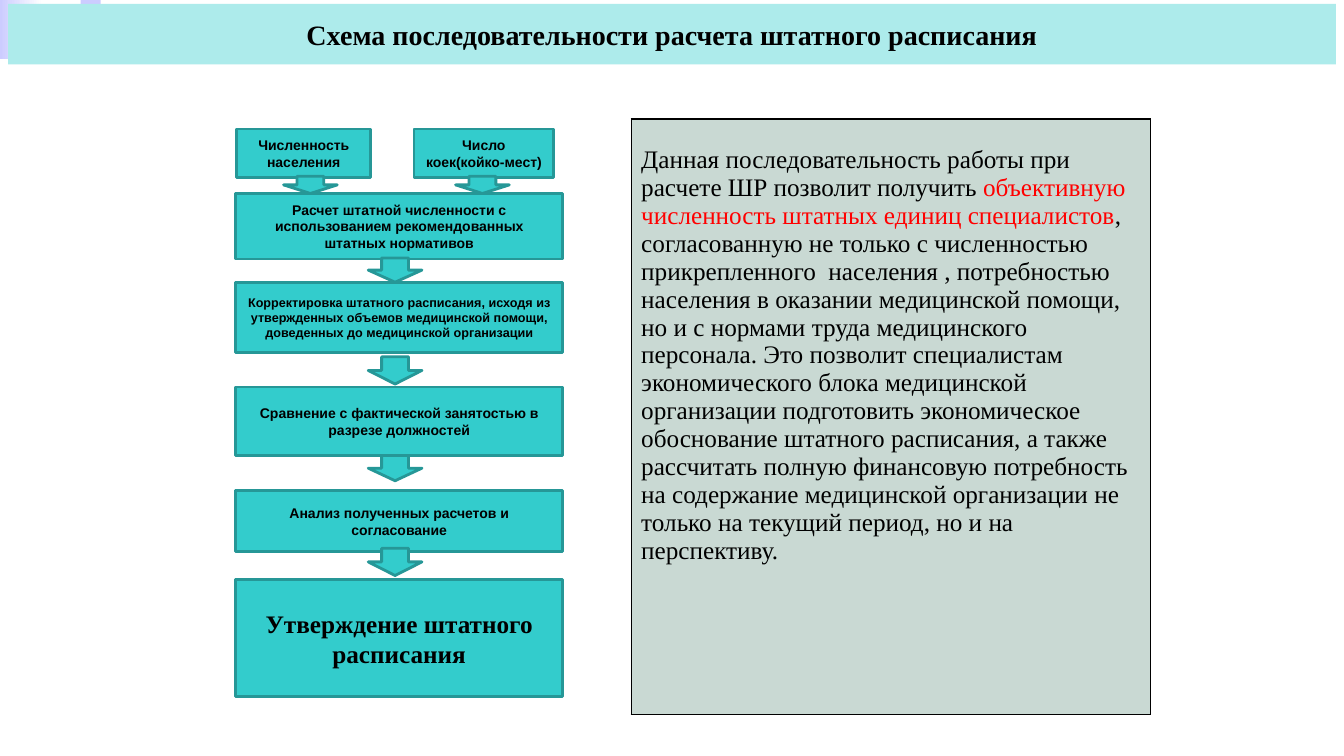
from lxml.etree import SubElement
from pptx import Presentation
from pptx.dml.color import RGBColor
from pptx.enum.shapes import MSO_SHAPE
from pptx.enum.text import MSO_ANCHOR, PP_ALIGN
from pptx.oxml.ns import qn
from pptx.util import Inches, Pt

WIDTH, HEIGHT = Inches(13.33), Inches(7.5)
BLACK = RGBColor(0, 0, 0)
WHITE = RGBColor(255, 255, 255)
RED = RGBColor(255, 0, 0)
LILAC = RGBColor(0xCC, 0xCC, 0xFF)
PALE_TEAL = RGBColor(0xAD, 0xEB, 0xEB)
TEAL = RGBColor(0x33, 0xCC, 0xCC)
DARK_TEAL = RGBColor(0x26, 0x97, 0x97)
GREY_GREEN = RGBColor(0xC9, 0xD9, 0xD3)
SERIF, SANS = "Times New Roman", "Arial"

# Places are left, top, width, height in percent of the slide's size.
FLOW_LEFT, FLOW_WIDTH = 17.55, 24.3
ARROW_WIDTH = 4
INPUT_TOP, INPUT_HEIGHT = 17.07, 6.4
INPUTS = [
    ("Численность населения", 17.6, 10, 21.1),
    ("Число коек(койко-мест)", 30.8, 10.4, 33.9),
]
STEPS = [
    ("Расчет штатной численности с использованием рекомендованных "
     "штатных нормативов", 25.6, 8.67, {}),
    ("Корректировка штатного расписания, исходя из утвержденных объемов "
     "медицинской помощи, доведенных до медицинской организации",
     37.33, 9.33, {"size": 9}),
    ("Сравнение с фактической занятостью в разрезе должностей",
     51.2, 9.07, {}),
    ("Анализ полученных расчетов и согласование", 64.93, 8, {}),
    ("Утверждение штатного расписания", 76.67, 15.47,
     {"size": 18, "font": SERIF}),
]
INPUT_ARROW = (23.33, 2.27)
STEP_ARROWS = [(34.13, 3.2), (47.2, 3.6), (60.27, 3.33), (72.53, 3.6)]
STEP_ARROW_LEFT = 27.4

EXPLANATION = [
    ("Данная последовательность работы при расчете ШР позволит получить ",
     BLACK),
    ("объективную численность штатных единиц специалистов", RED),
    (", согласованную не только с численностью прикрепленного  населения , "
     "потребностью населения в оказании медицинской помощи, но и с нормами "
     "труда медицинского персонала. Это позволит специалистам экономического "
     "блока медицинской организации подготовить экономическое обоснование "
     "штатного расписания, а также рассчитать полную финансовую потребность "
     "на содержание медицинской организации не только на текущий период, "
     "но и на перспективу.", BLACK),
]


def to_lengths(place):
    left, top, width, height = place
    return (int(WIDTH * left / 100), int(HEIGHT * top / 100),
            int(WIDTH * width / 100), int(HEIGHT * height / 100))


def add_text(para, text, size=10, font=SANS, color=BLACK, bold=True):
    span = para.add_run()
    span.text = text
    span.font.size = Pt(size)
    span.font.name = font
    span.font.bold = bold
    span.font.color.rgb = color


def add_block(page, place, fill, line=None, kind=MSO_SHAPE.RECTANGLE):
    block = page.shapes.add_shape(kind, *to_lengths(place))
    block.shadow.inherit = False
    block.fill.solid()
    block.fill.fore_color.rgb = fill
    if line is None:
        block.line.fill.background()
    else:
        block.line.color.rgb = line
        block.line.width = Pt(2)
    return block


def add_label(block, text, **text_format):
    """Centre a text in a block."""
    frame = block.text_frame
    frame.word_wrap = True
    frame.vertical_anchor = MSO_ANCHOR.MIDDLE
    para = frame.paragraphs[0]
    para.alignment = PP_ALIGN.CENTER
    add_text(para, text, **text_format)


def add_step(page, place, text, **text_format):
    add_label(add_block(page, place, TEAL, DARK_TEAL), text, **text_format)


def add_arrow(page, left, top, height):
    add_block(page, (left, top, ARROW_WIDTH, height), TEAL, DARK_TEAL,
              MSO_SHAPE.DOWN_ARROW)


def add_header(page):
    corner = add_block(page, (0, 0, 3.15, 7.8), LILAC)
    corner.fill.gradient()
    corner.fill.gradient_angle = 0
    for stop, color in zip(corner.fill.gradient_stops, (LILAC, WHITE)):
        stop.color.rgb = color
    add_block(page, (6, 0, 1.5, 2), LILAC)
    title = add_block(page, (0.6, 0.53, 98.8, 8), PALE_TEAL)
    add_label(title, "Схема последовательности расчета штатного расписания",
              size=20, font=SERIF)


def add_flow(page):
    for text, left, width, _ in INPUTS:
        add_step(page, (left, INPUT_TOP, width, INPUT_HEIGHT), text)
    for text, top, height, text_format in STEPS:
        add_step(page, (FLOW_LEFT, top, FLOW_WIDTH, height), text,
                 **text_format)
    for *_, arrow_left in INPUTS:
        add_arrow(page, arrow_left, *INPUT_ARROW)
    for top, height in STEP_ARROWS:
        add_arrow(page, STEP_ARROW_LEFT, top, height)


def set_borders(cell, color, width):
    properties = cell._tc.get_or_add_tcPr()
    for position, side in enumerate(("lnL", "lnR", "lnT", "lnB")):
        border = SubElement(properties, qn(f"a:{side}"), w=str(Pt(width)))
        fill = SubElement(border, qn("a:solidFill"))
        SubElement(fill, qn("a:srgbClr"), val=str(color))
        properties.insert(position, border)


def add_explanation(page):
    frame = page.shapes.add_table(1, 1, *to_lengths((46.96, 15.73, 38.63, 78.8)))
    cell = frame.table.cell(0, 0)
    cell.fill.solid()
    cell.fill.fore_color.rgb = GREY_GREEN
    cell.margin_top = Inches(0.27)
    cell.vertical_anchor = MSO_ANCHOR.TOP
    set_borders(cell, BLACK, 1)
    para = cell.text_frame.paragraphs[0]
    for text, color in EXPLANATION:
        add_text(para, text, size=18, font=SERIF, color=color, bold=False)


def main():
    deck = Presentation()
    deck.slide_width, deck.slide_height = WIDTH, HEIGHT
    page = deck.slides.add_slide(deck.slide_layouts[6])
    add_header(page)
    add_flow(page)
    add_explanation(page)
    deck.save("out.pptx")


if __name__ == "__main__":
    main()
